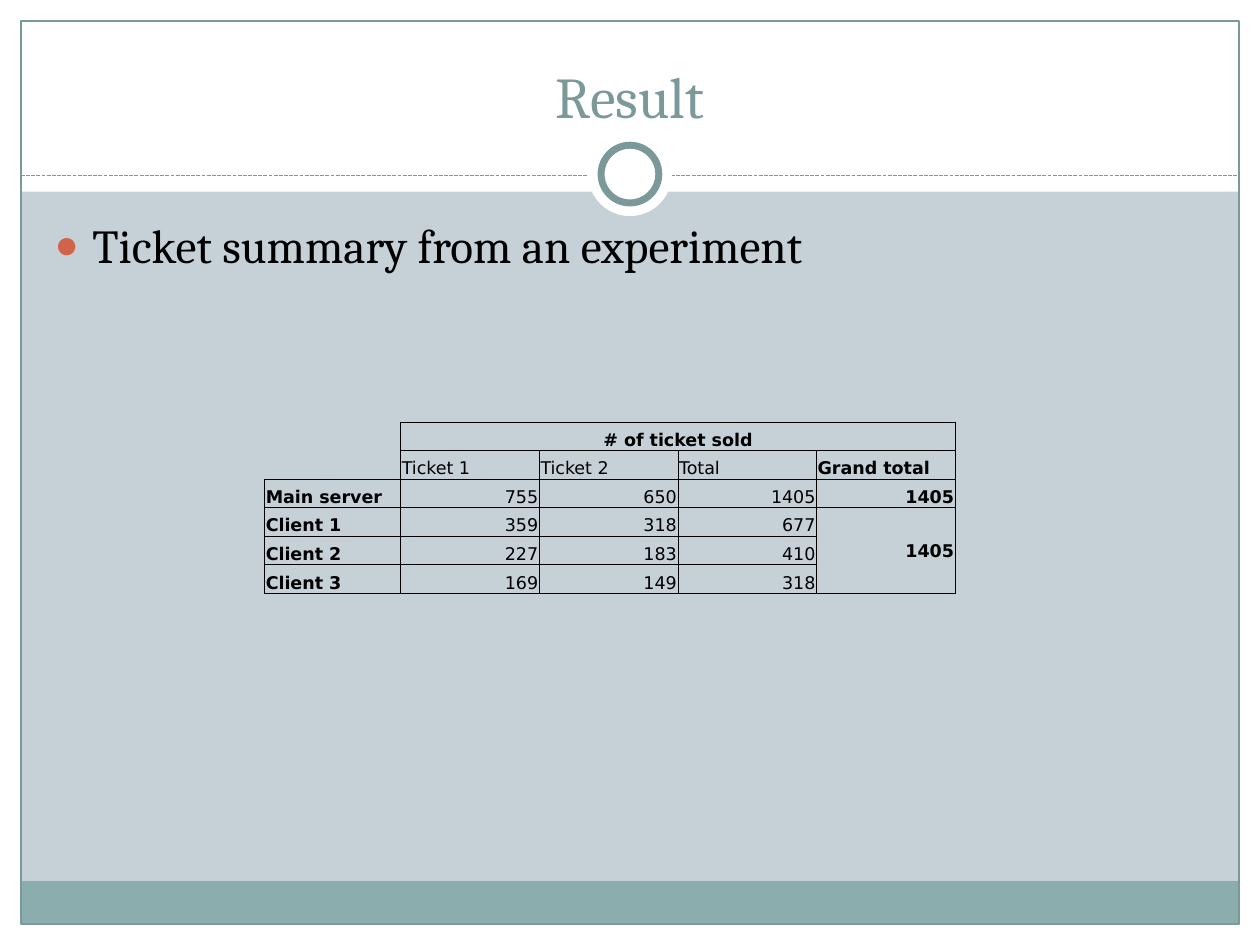
from lxml import etree
from pptx import Presentation
from pptx.dml.color import RGBColor
from pptx.enum.dml import MSO_LINE
from pptx.enum.shapes import MSO_CONNECTOR, MSO_SHAPE
from pptx.enum.text import MSO_ANCHOR, MSO_AUTO_SIZE, PP_ALIGN
from pptx.oxml.ns import qn
from pptx.util import Pt

RECTANGLE, OVAL = MSO_SHAPE.RECTANGLE, MSO_SHAPE.OVAL
STRAIGHT, DASHED = MSO_CONNECTOR.STRAIGHT, MSO_LINE.SQUARE_DOT
MIDDLE, BOTTOM = MSO_ANCHOR.MIDDLE, MSO_ANCHOR.BOTTOM
LEFT, CENTER, RIGHT = PP_ALIGN.LEFT, PP_ALIGN.CENTER, PP_ALIGN.RIGHT
FIXED_SIZE = MSO_AUTO_SIZE.NONE

WIDTH, HEIGHT, MARGIN = 720, 540, 12
WHITE, BLACK, TEAL, BAND = "FFFFFF", "000000", "7C999A", "8CADAE"
BACKGROUND, ACCENT = "C5D1D7", "D16349"
SERIF, SANS = "Cambria", "DejaVu Sans"

TICKETS = [
    ["", "# of ticket sold", "", "", ""],
    ["", "Ticket 1", "Ticket 2", "Total", "Grand total"],
    ["Main server", "755", "650", "1405", "1405"],
    ["Client 1", "359", "318", "677", "1405"],
    ["Client 2", "227", "183", "410", ""],
    ["Client 3", "169", "149", "318", ""],
]
OPEN_CORNER = {(0, 0): "R", (1, 0): "RB"}


def color(value):
    return RGBColor.from_string(value)


def apply(target, values):
    for name, value in values.items():
        setattr(target, name, value)


def place(shape, box):
    names = ("left", "top", "width", "height")
    apply(shape, {name: Pt(value) for name, value in zip(names, box)})


def style_font(font, size, name, fill, bold=False):
    apply(font, {"size": Pt(size), "name": name, "bold": bold})
    font.color.rgb = color(fill)


def add_panel(page, box, fill=None, line=None, weight=0.75, kind=RECTANGLE):
    panel = page.shapes.add_shape(kind, *map(Pt, box))
    panel.shadow.inherit = False
    if fill:
        panel.fill.solid()
        panel.fill.fore_color.rgb = color(fill)
    else:
        panel.fill.background()
    if line:
        panel.line.color.rgb = color(line)
        panel.line.width = Pt(weight)
    else:
        panel.line.fill.background()


def add_backdrop(page, box):
    """White margins, footer band, frame, dashed divider and ring."""
    left, top, width, height = box
    right, bottom = left + width, top + height
    add_panel(page, (left, bottom - MARGIN, width, MARGIN), WHITE)
    add_panel(page, (left, top, width, 109.5), WHITE)
    for side in (left, right - MARGIN):
        add_panel(page, (side, top, MARGIN, height), WHITE)
    inner = width - 2 * MARGIN
    add_panel(page, (left + MARGIN, bottom - 36.5, inner, 24.5), BAND)
    add_panel(page, (left + MARGIN, top + MARGIN, inner, height - 2 * MARGIN),
              line=TEAL)

    divider_y = Pt(top + 100.5)
    divider = page.shapes.add_connector(
        STRAIGHT, Pt(left + MARGIN), divider_y, Pt(right - MARGIN), divider_y)
    divider.line.color.rgb = color(TEAL)
    apply(divider.line, {"width": Pt(0.75), "dash_style": DASHED})
    etree.SubElement(divider._element.spPr, qn("a:effectLst"))

    center_x, center_y = left + width / 2, top + 99.5
    for size, line in ((48, None), (33, TEAL)):
        ring = (center_x - size / 2, center_y - size / 2, size, size)
        add_panel(page, ring, WHITE, line, 4, OVAL)


def fill_placeholder(page, holder, box, text, size, fill, anchor, align):
    page.shapes._spTree.append(holder._element)  # bring to front
    place(holder, box)
    frame = holder.text_frame
    frame.text = text
    apply(frame, {"word_wrap": True, "auto_size": FIXED_SIZE,
                  "vertical_anchor": anchor})
    para = frame.paragraphs[0]
    para.alignment = align
    style_font(para.runs[0].font, size, SERIF, fill)
    return para


def add_title(page, box):
    fill_placeholder(page, page.shapes.title, box, "Result", 33, TEAL,
                     BOTTOM, CENTER)


def add_bullet_list(page, box):
    para = fill_placeholder(page, page.placeholders[1], box,
                            "Ticket summary from an experiment", 27, BLACK,
                            MSO_ANCHOR.TOP, LEFT)
    props = para._p.get_or_add_pPr()
    indent = Pt(21.6)
    props.set("marL", str(indent))
    props.set("indent", str(-indent))
    bullet_color = etree.SubElement(props, qn("a:buClr"))
    etree.SubElement(bullet_color, qn("a:srgbClr"), val=ACCENT)
    etree.SubElement(props, qn("a:buSzPct"), val="85000")
    etree.SubElement(props, qn("a:buChar"), char="●")


def set_borders(cell, sides):
    props = cell._tc.get_or_add_tcPr()
    for position, side in enumerate("LRTB"):
        line = etree.Element(qn("a:ln" + side), w=str(Pt(0.5)))
        if side in sides:
            fill = etree.SubElement(line, qn("a:solidFill"))
            etree.SubElement(fill, qn("a:srgbClr"), val=BLACK)
        else:
            etree.SubElement(line, qn("a:noFill"))
        props.insert(position, line)


def cell_align(row, column):
    if row == 0:
        return CENTER
    return RIGHT if row > 1 and column > 0 else LEFT


def add_ticket_table(page, box):
    left, top, width, height = box
    row_count, column_count = len(TICKETS), len(TICKETS[0])
    table = page.shapes.add_table(row_count, column_count,
                                  *map(Pt, box)).table
    apply(table, {"first_row": False, "horz_banding": False})
    label_width = 77.8
    value_width = (width - label_width) / (column_count - 1)
    for index, column in enumerate(table.columns):
        column.width = Pt(value_width if index else label_width)
    for row in table.rows:
        row.height = Pt(height / row_count)

    for row, texts in enumerate(TICKETS):
        for column, text in enumerate(texts):
            cell = table.cell(row, column)
            apply(cell, {"margin_left": Pt(0.7), "margin_right": Pt(0.7),
                         "margin_top": Pt(0.7), "margin_bottom": 0,
                         "vertical_anchor": BOTTOM})
            cell.fill.background()
            set_borders(cell, OPEN_CORNER.get((row, column), "LRTB"))
            para = cell.text_frame.paragraphs[0]
            para.alignment = cell_align(row, column)
            if text:
                span = para.add_run()
                span.text = text
                bold = row == 0 or column in (0, column_count - 1)
                style_font(span.font, 10, SANS, BLACK, bold)
            else:
                etree.SubElement(para._p, qn("a:endParaRPr"), sz="1000")

    table.cell(0, 1).merge(table.cell(0, column_count - 1))
    client_total = table.cell(3, column_count - 1)
    client_total.merge(table.cell(row_count - 1, column_count - 1))
    client_total.vertical_anchor = MIDDLE


def main():
    deck = Presentation()
    apply(deck, {"slide_width": Pt(WIDTH), "slide_height": Pt(HEIGHT)})
    page = deck.slides.add_slide(deck.slide_layouts[1])
    page.background.fill.solid()
    page.background.fill.fore_color.rgb = color(BACKGROUND)
    add_backdrop(page, (0, 0, WIDTH, HEIGHT))
    add_title(page, (24, 18, 672, 60))
    add_ticket_table(page, (151.2, 241.2, 394.6, 97.9))
    add_bullet_list(page, (24, 120, 669.6, 360))
    deck.save("out.pptx")


if __name__ == "__main__":
    main()
